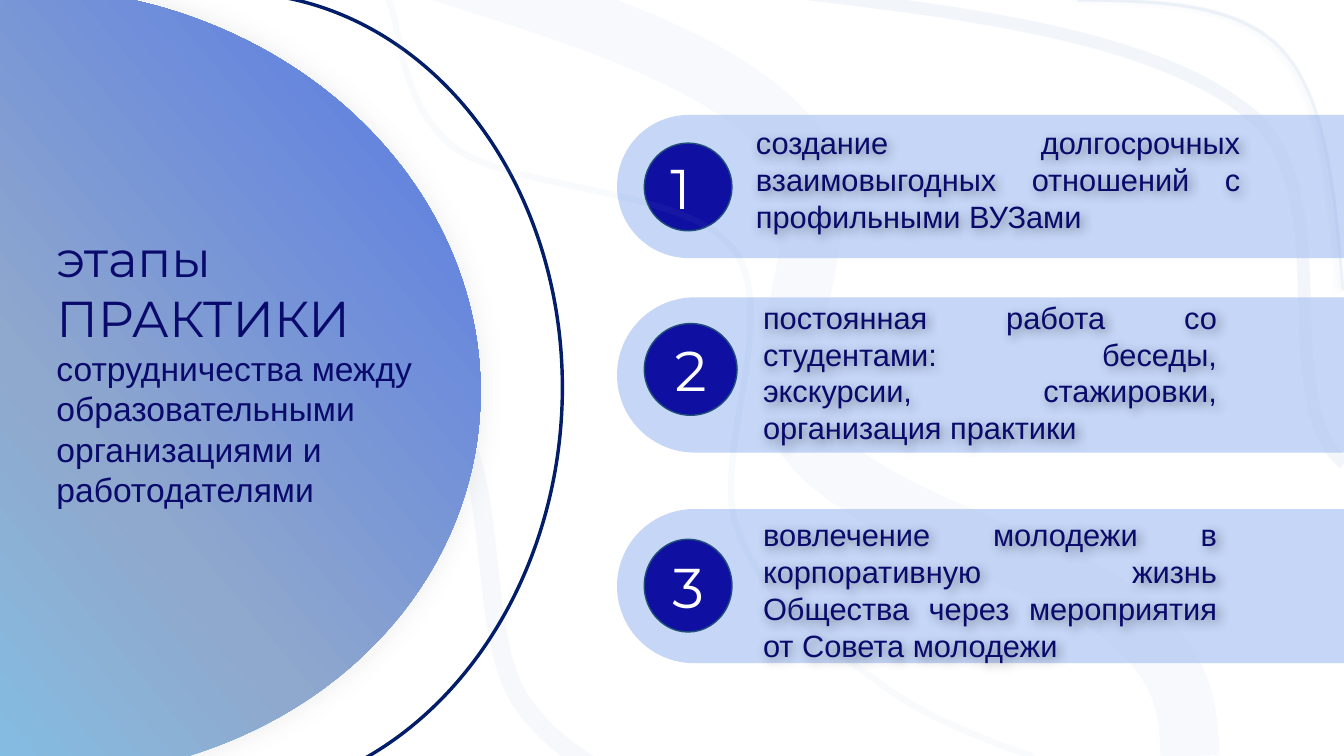
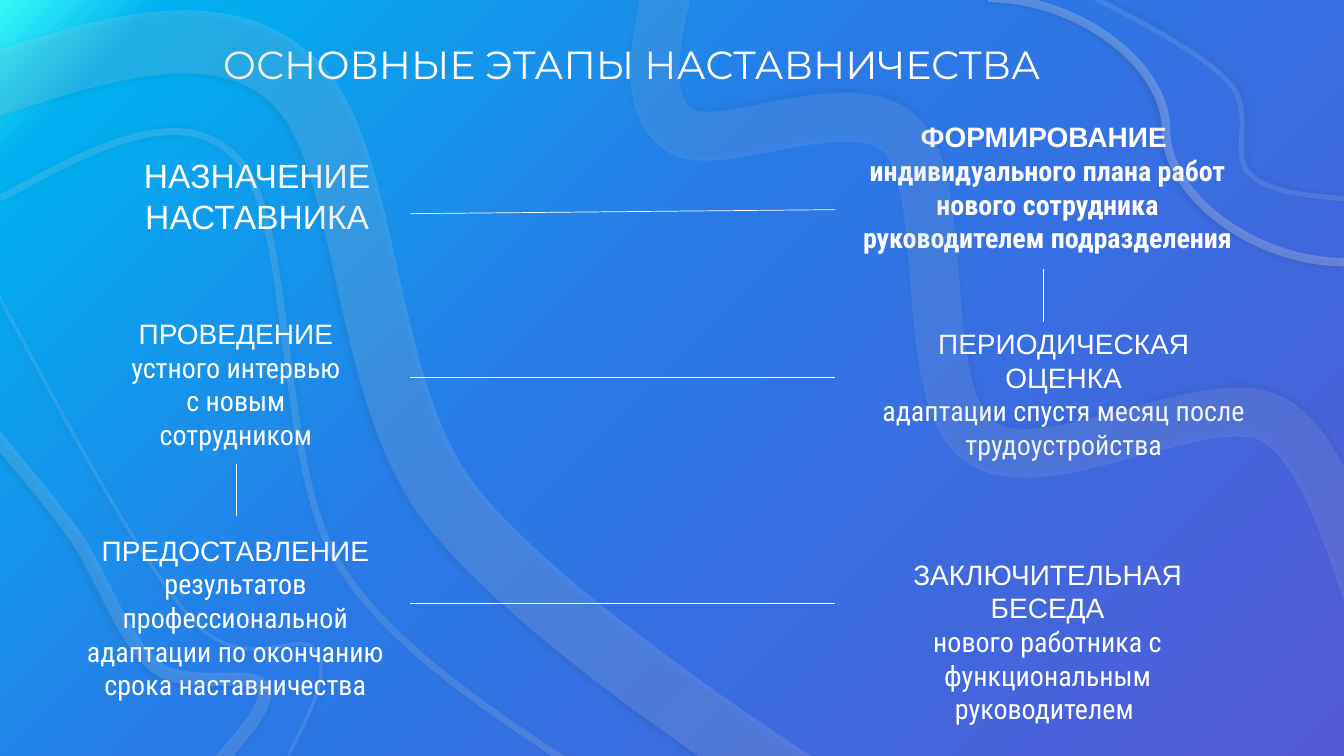
from dataclasses import dataclass
from math import cos, radians, sin

from lxml.etree import SubElement
from pptx import Presentation
from pptx.dml.color import RGBColor
from pptx.enum.shapes import MSO_CONNECTOR, MSO_SHAPE
from pptx.enum.text import MSO_ANCHOR, MSO_AUTO_SIZE, PP_ALIGN
from pptx.oxml.ns import qn
from pptx.util import Pt

PX = 9144  # 100 px to the inch


@dataclass(frozen=True)
class Theme:
    white: str = "FFFFFF"
    black: str = "000000"
    ink: str = "0A0A6C"
    badge: str = "0F0FA1"
    rim: str = "1F4E79"
    arc: str = "002060"
    pill: str = "C5D6F7"
    steel: str = "8FAADC"
    pale: str = "B4C7E7"
    ice: str = "DEEBF7"
    gray: str = "AFABAB"
    deep: str = "2F5597"
    disc: tuple = ((0, "75DBFF"), (50, "8FA8CD"), (100, "4F73E7"))
    sky: tuple = ((0, "5359D5"), (56, "297AE7"), (92, "00B0F0"), (100, "37F9F9"))
    head: str = "Montserrat"
    body: str = "Arial"
    slim: str = "Roboto Condensed"
    digit: int = 40
    big: int = 36
    title: int = 28
    lead: int = 24
    item: int = 22
    step: int = 20


T = Theme()


def glaze(shape, line=None, glow=None):
    """Set line (colour, width, opacity) and shadow (colour, opacity, blur, distance, angle)."""
    props = shape.element.spPr
    if line:
        tint, width, alpha = line
        shape.line.color.rgb = RGBColor.from_string(tint)
        shape.line.width = Pt(width)
        if alpha < 100:
            node = props.find(qn("a:ln")).find(".//" + qn("a:srgbClr"))
            SubElement(node, qn("a:alpha"), val=str(alpha * 1000))
    else:
        shape.line.fill.background()
    effect = SubElement(props, qn("a:effectLst"))
    if glow:
        tint, alpha, blur, dist, angle = glow
        shade = SubElement(effect, qn("a:outerShdw"), blurRad=str(Pt(blur)), dist=str(Pt(dist)),
                           dir=str(angle * 60000), algn="ctr", rotWithShape="0")
        node = SubElement(shade, qn("a:srgbClr"), val=tint)
        SubElement(node, qn("a:alpha"), val=str(alpha * 1000))


def wave(shapes, line, glow, *points):
    """Draw a chain of cubic curves: a start, then three points for each curve."""
    pen = shapes.build_freeform(*points[0], scale=PX)
    pen.add_line_segments(points[1:], close=False)
    shape = pen.convert_to_shape()
    shape.fill.background()
    glaze(shape, line, glow)
    # Turn each three straight parts into one curve
    track = shape.element.find(".//" + qn("a:path"))
    parts = track.findall(qn("a:lnTo"))
    for i in range(0, len(parts), 3):
        curve = SubElement(track, qn("a:cubicBezTo"))
        for part in parts[i:i + 3]:
            curve.append(part[0])
            track.remove(part)
    # Fit the frame to the curve instead of its control points
    bounds = []
    for axis in (0, 1):
        seen = []
        for i in range(0, len(points) - 1, 3):
            a, b, c, d = (p[axis] for p in points[i:i + 4])
            for t in (n / 20 for n in range(21)):
                u = 1 - t
                seen.append(a * u ** 3 + 3 * b * u * u * t + 3 * c * u * t * t + d * t ** 3)
        low, high = round(min(seen)), round(max(seen))
        shift = min(p[axis] for p in points) - low
        for dot in track.iter(qn("a:pt")):
            dot.set("xy"[axis], str(int(dot.get("xy"[axis])) + shift))
        track.set("wh"[axis], str(high - low))
        bounds.append((low * PX, (high - low) * PX))
    (shape.left, shape.width), (shape.top, shape.height) = bounds
    return shape


deck = Presentation()
deck.slide_width, deck.slide_height = 1333 * PX, 750 * PX
first, second = [deck.slides.add_slide(deck.slide_layouts[5]) for _ in range(2)]
texts = []  # shape, alignment, colour, paragraphs

# Slide 1: pills
for top, high in ((295, 154), (505, 153), (114, 142)):
    pill = first.shapes.add_shape(MSO_SHAPE.ROUNDED_RECTANGLE, 612 * PX, top * PX, 844 * PX, high * PX)
    pill.adjustments[0] = 0.5
    pill.fill.solid()
    pill.fill.fore_color.rgb = RGBColor.from_string(T.pill)
    glaze(pill)

# Slide 1: waves behind the text, the first one tilted about its centre
tilt = 16.8
c, s = cos(radians(tilt)), sin(radians(tilt))
flow = ((997, 849), (916, 849), (835, 848), (756, 823), (676, 799), (576, 775), (521, 702),
        (465, 630), (506, 441), (423, 388), (339, 334), (110, 408), (19, 383), (-72, 359),
        (-98, 266), (-121, 242), (-145, 217), (-135, 227), (-124, 237))
flat = [(round(430 + (x - 430) * c - (y - 538) * s), round(538 + (x - 430) * s + (y - 538) * c))
        for x, y in flow]
wave(first.shapes, (T.steel, 13.25, 8), None, *flat).rotation = -tilt
wave(first.shapes, (T.pale, 9, 16), None, (767, -10), (956, 12), (1146, 35), (1240, 113),
     (1334, 191), (1258, 394), (1333, 460))
wave(first.shapes, (T.pale, 42, 10), None, (389, -42), (551, 7), (714, 55), (782, 135),
     (851, 214), (744, 355), (799, 434), (854, 513), (1050, 558), (1113, 610),
     (1177, 663), (1179, 706), (1180, 750))

# Slide 1: disc
disc = first.shapes.add_shape(MSO_SHAPE.CHORD, -415 * PX, -12 * PX, 892 * PX, 783 * PX)
disc.rotation = 185.1
disc.adjustments[0], disc.adjustments[1] = 47.73, 162
disc.fill.gradient()
glaze(disc, glow=(T.gray, 24, 18, 0, 0))

# Gradients of the disc and of the second background
second.background.fill.gradient()
for node, stops in ((disc.element, T.disc), (second.element, T.sky)):
    grad = node.find(".//" + qn("a:gradFill"))
    for child in list(grad):
        grad.remove(child)
    chain = SubElement(grad, qn("a:gsLst"))
    for place, tint in stops:
        stop = SubElement(chain, qn("a:gs"), pos=str(place * 1000))
        SubElement(stop, qn("a:srgbClr"), val=tint)
    if stops is T.disc:
        SubElement(grad, qn("a:lin"), ang=str(135 * 60000), scaled="0")
    else:
        way = SubElement(grad, qn("a:path"), path="circle")
        SubElement(way, qn("a:fillToRect"), l="100000", t="100000")

# Slide 1: numbered items
items = (
    ((639, 142, 87, 87), (740, 118, 500, 120),
     "создание долгосрочных взаимовыгодных отношений с профильными ВУЗами"),
    ((639, 321, 92, 91), (747, 291, 470, 158),
     "постоянная работа со студентами: беседы, экскурсии, стажировки, организация практики"),
    ((639, 535, 87, 92), (747, 507, 470, 158),
     "вовлечение молодежи в корпоративную жизнь Общества через мероприятия от Совета молодежи"),
)
for count, (spot, box, words) in enumerate(items, 1):
    group = first.shapes.add_group_shape()
    badge = group.shapes.add_shape(MSO_SHAPE.OVAL, *(n * PX for n in spot))
    badge.fill.solid()
    badge.fill.fore_color.rgb = RGBColor.from_string(T.badge)
    glaze(badge, (T.rim, 1, 100))
    badge.text_frame.vertical_anchor = MSO_ANCHOR.MIDDLE
    holder, align = badge, PP_ALIGN.CENTER
    if count == 1:  # the first digit sits in its own box
        holder, align = group.shapes.add_textbox(655 * PX, 147 * PX, 43 * PX, 76 * PX), PP_ALIGN.LEFT
    texts.append((holder, align, T.white, [(str(count), T.digit, T.head, False)]))
    label = group.shapes.add_textbox(*(n * PX for n in box))
    glaze(label, glow=(T.black, 40, 8, 3, 45))
    texts.append((label, PP_ALIGN.JUSTIFY, T.ink, [(words, T.item, T.body, False)]))

# Slide 2: steps, each a heading and an optional detail
steps = (
    ((104, 149, 302, 131), T.lead, False, "НАЗНАЧЕНИЕ НАСТАВНИКА", ""),
    ((828, 114, 422, 145), T.step, True, "ФОРМИРОВАНИЕ ",
     "индивидуального плана работ нового сотрудника руководителем подразделения"),
    ((111, 309, 246, 111), T.step, False, "ПРОВЕДЕНИЕ", "устного интервью с новым сотрудником"),
    ((860, 319, 390, 111), T.step, False, "ПЕРИОДИЧЕСКАЯ ОЦЕНКА",
     "адаптации спустя месяц после трудоустройства"),
    ((48, 524, 371, 178), T.step, False, "ПРЕДОСТАВЛЕНИЕ",
     "результатов профессиональной адаптации по окончанию срока наставничества"),
    ((838, 548, 402, 111), T.step, False, "ЗАКЛЮЧИТЕЛЬНАЯ БЕСЕДА",
     "нового работника с функциональным руководителем "),
)
for box, size, bold, head, more in steps:
    label = second.shapes.add_textbox(*(n * PX for n in box))
    lines = [(head, size, T.body, bold)]
    if more:
        lines.append((more, size, T.slim, bold))
    texts.append((label, PP_ALIGN.CENTER, T.white, lines))

# Slide 2: links between steps
for ends in ((407, 212, 828, 208), (1035, 267, 1035, 319), (407, 374, 828, 374),
             (407, 599, 828, 599), (234, 460, 234, 512)):
    link = second.shapes.add_connector(MSO_CONNECTOR.STRAIGHT, *(n * PX for n in ends))
    glaze(link, (T.white, 0.5, 100))

# Titles, raised above the shapes drawn so far
titles = (
    (first, (46, 220, 400, 293), T.ink, [
        ("этапы", T.big, T.head, False),
        ("ПРАКТИКИ", T.big, T.head, False),
        ("сотрудничества между образовательными организациями и работодателями",
         T.lead, T.body, False)]),
    (second, (211, 35, 963, 57), T.white,
     [("ОСНОВНЫЕ ЭТАПЫ НАСТАВНИЧЕСТВА", T.title, T.head, False)]),
)
for slide, box, tint, lines in titles:
    title = slide.shapes.title
    title.left, title.top, title.width, title.height = (n * PX for n in box)
    title.text_frame.vertical_anchor = MSO_ANCHOR.TOP
    title.element.getparent().append(title.element)
    texts.append((title, PP_ALIGN.LEFT, tint, lines))

# Slide 1: arc and front waves
arc = first.shapes.add_shape(MSO_SHAPE.BLOCK_ARC, -177 * PX, 57 * PX, 801 * PX, 670 * PX)
arc.rotation = 93
for i, turn in enumerate((110.17, 203.35, 3 / 1000)):
    arc.adjustments[i] = turn
arc.fill.solid()
arc.fill.fore_color.rgb = RGBColor.from_string(T.badge)
glaze(arc, (T.arc, 1, 100))
wave(first.shapes, (T.steel, 4.5, 5), None, (1025, 751), (970, 731), (915, 711), (866, 673),
     (816, 635), (753, 592), (730, 521), (707, 450), (774, 310), (728, 248),
     (682, 186), (510, 189), (453, 148), (396, 107), (398, 27), (386, 2),
     (375, -23), (380, -12), (385, -2))
wave(first.shapes, (T.steel, 2.25, 12), (T.deep, 40, 4, 3, 180), (1069, 0), (1148, 1),
     (1228, 2), (1272, 50), (1316, 98), (1324, 193), (1332, 288))

# Slide 2: one group of waves over the text
sea = second.shapes.add_group_shape().shapes
wave(sea, (T.ice, 45, 14), (T.black, 40, 4, 3, 135), (-12, 86), (101, 49), (215, 11),
     (290, 79), (366, 147), (357, 376), (442, 494), (527, 611), (798, 783), (798, 783))
wave(sea, (T.ice, 35, 11), (T.black, 40, 4, 3, 270), (669, -40), (652, 29), (634, 99),
     (672, 128), (709, 157), (845, 84), (895, 135), (944, 187), (909, 391), (970, 437),
     (1031, 484), (1193, 384), (1260, 415), (1327, 447), (1354, 611), (1373, 626),
     (1393, 642), (1385, 576), (1377, 510))
wave(sea, (T.white, 5, 13), (T.black, 40, 5, 0, 0), (0, 197), (90, 148), (180, 98),
     (236, 158), (292, 218), (274, 452), (334, 556), (394, 659), (550, 742), (593, 779),
     (637, 816), (616, 797), (595, 779))
bend = sea.add_connector(MSO_CONNECTOR.CURVE, 980 * PX, -2 * PX, 1333 * PX, 260 * PX)
glaze(bend, (T.white, 6, 22), (T.black, 40, 4, 3, 180))
wave(sea, (T.white, 9.5, 13), (T.black, 40, 4, 3, 135), (211, 763), (240, 730), (270, 698),
     (260, 681), (251, 664), (185, 686), (154, 661), (123, 637), (101, 571), (76, 534),
     (50, 497), (13, 455), (1, 439), (-12, 424), (-4, 432), (3, 441))
wave(sea, (T.white, 2.5, 11), (T.black, 40, 4, 3, 90), (286, 749), (307, 708), (329, 667),
     (313, 645), (297, 622), (243, 673), (191, 615), (139, 557), (69, 425), (-1, 294))
wave(sea, (T.white, 3.5, 11), (T.black, 40, 4, 3, 315), (1086, -2), (1140, 26), (1194, 54),
     (1220, 83), (1245, 112), (1220, 153), (1239, 172), (1258, 191), (1296, 194), (1333, 197))

# Text of both slides
for shape, align, tint, lines in texts:
    frame = shape.text_frame
    frame.word_wrap = True
    if frame.vertical_anchor != MSO_ANCHOR.MIDDLE:
        frame.auto_size = MSO_AUTO_SIZE.SHAPE_TO_FIT_TEXT
    for i, (words, size, face, bold) in enumerate(lines):
        para = frame.add_paragraph() if i else frame.paragraphs[0]
        para.alignment = align
        run = para.add_run()
        run.text = words
        run.font.size = Pt(size)
        run.font.name = face
        run.font.bold = bold
        run.font.color.rgb = RGBColor.from_string(tint)

deck.save("out.pptx")
